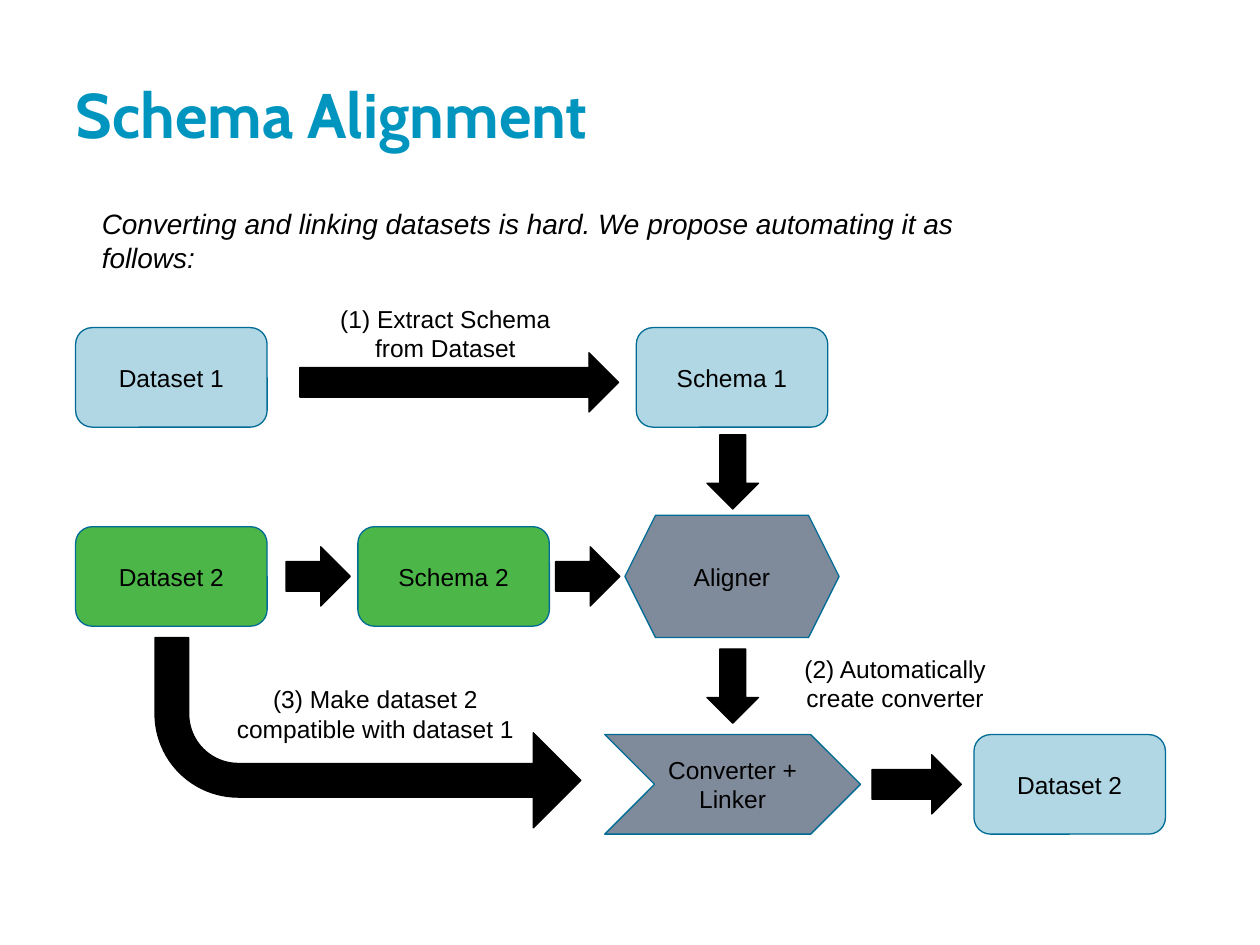
from dataclasses import dataclass

from pptx import Presentation
from pptx.dml.color import RGBColor
from pptx.enum.shapes import MSO_SHAPE
from pptx.enum.text import MSO_ANCHOR, MSO_AUTO_SIZE, PP_ALIGN
from pptx.util import Inches, Pt

ROUNDED = MSO_SHAPE.ROUNDED_RECTANGLE
HEXAGON = MSO_SHAPE.HEXAGON
CHEVRON = MSO_SHAPE.CHEVRON
ARROW = MSO_SHAPE.RIGHT_ARROW
BENT_ARROW = MSO_SHAPE.BENT_ARROW
LEFT, CENTER = PP_ALIGN.LEFT, PP_ALIGN.CENTER
TOP, MIDDLE = MSO_ANCHOR.TOP, MSO_ANCHOR.MIDDLE

BLACK = RGBColor(0x00, 0x00, 0x00)
TITLE_BLUE = RGBColor(0x00, 0x95, 0xBF)
OUTLINE_BLUE = RGBColor(0x00, 0x6B, 0x94)
LIGHT_BLUE = RGBColor(0xB0, 0xD7, 0xE3)
GREEN = RGBColor(0x4C, 0xB7, 0x48)
GRAY = RGBColor(0x7F, 0x8A, 0x9A)

NODE_WIDTH, NODE_HEIGHT = 1.52, 0.79
ARROW_HEIGHT = 0.47
FIRST_ROW, SECOND_ROW, THIRD_ROW = 2.6, 4.18, 5.83


@dataclass
class Node:
    text: str
    left: float
    top: float
    fill: RGBColor
    kind: MSO_SHAPE = ROUNDED
    width: float = NODE_WIDTH
    height: float = NODE_HEIGHT
    adjustment: float = 0.167


@dataclass
class Arrow:
    left: float
    top: float
    width: float
    height: float = ARROW_HEIGHT
    rotation: int = 0


@dataclass
class Caption:
    text: str
    left: float
    top: float
    width: float = 2.17
    height: float = 0.71


NODES = [
    Node("Dataset 1", 0.6, FIRST_ROW, LIGHT_BLUE),
    Node("Schema 1", 5.05, FIRST_ROW, LIGHT_BLUE),
    Node("Aligner", 4.96, 4.09, GRAY, HEXAGON, 1.7, 0.97, 0.25),
    Node("Dataset 2", 0.6, SECOND_ROW, GREEN),
    Node("Schema 2", 2.84, SECOND_ROW, GREEN),
    Node("Converter + Linker", 4.8, THIRD_ROW, GRAY, CHEVRON, 2.03, adjustment=0.5),
    Node("Dataset 2", 7.73, THIRD_ROW, LIGHT_BLUE),
]
ARROWS = [
    Arrow(2.38, 2.8, 2.53),
    Arrow(5.52, 3.54, 0.59, 0.41, rotation=90),
    Arrow(2.27, 4.34, 0.51),
    Arrow(4.41, 4.34, 0.51),
    Arrow(5.52, 5.24, 0.59, 0.41, rotation=90),
    Arrow(6.92, 5.99, 0.71),
]
CAPTIONS = [
    Caption("(1) Extract Schema from Dataset", 2.45, 2.31),
    Caption("(2) Automatically create converter", 6.02, 5.09),
    Caption("(3) Make dataset 2 compatible with dataset 1", 1.78, 5.33, width=2.4),
]


def write_text(shape, text: str, *, size: int = 14, font: str = "Arial",
               color: RGBColor = BLACK, bold: bool = False, italic: bool = False,
               align: PP_ALIGN = CENTER, anchor: MSO_ANCHOR = TOP) -> None:
    frame = shape.text_frame
    frame.word_wrap = True
    frame.auto_size = MSO_AUTO_SIZE.NONE
    frame.vertical_anchor = anchor
    frame.margin_left = frame.margin_right = Inches(0.1)
    frame.margin_top = frame.margin_bottom = Inches(0.1)
    para = frame.paragraphs[0]
    para.alignment = align
    span = para.add_run()
    span.text = text
    span.font.size = Pt(size)
    span.font.name = font
    span.font.color.rgb = color
    span.font.bold = bold
    span.font.italic = italic


def add_text(page, text: str, left: float, top: float, width: float,
             height: float, **text_format) -> None:
    box = page.shapes.add_textbox(Inches(left), Inches(top), Inches(width), Inches(height))
    write_text(box, text, **text_format)


def add_filled_shape(page, kind: MSO_SHAPE, left: float, top: float, width: float,
                     height: float, fill: RGBColor, line: RGBColor):
    shape = page.shapes.add_shape(
        kind, Inches(left), Inches(top), Inches(width), Inches(height))
    shape.shadow.inherit = False
    shape.fill.solid()
    shape.fill.fore_color.rgb = fill
    shape.line.color.rgb = line
    shape.line.width = Pt(0.75)
    return shape


def add_node(page, node: Node) -> None:
    shape = add_filled_shape(page, node.kind, node.left, node.top, node.width,
                             node.height, node.fill, OUTLINE_BLUE)
    shape.adjustments[0] = node.adjustment
    write_text(shape, node.text, anchor=MIDDLE)


def add_arrow(page, arrow: Arrow) -> None:
    shape = add_filled_shape(page, ARROW, arrow.left, arrow.top, arrow.width,
                             arrow.height, BLACK, BLACK)
    shape.rotation = arrow.rotation


def add_return_arrow(page) -> None:
    """Draw the arrow that bends from Dataset 2 down to the converter."""
    shape = add_filled_shape(page, BENT_ARROW, 1.23, 5.06, 3.38, 1.51, BLACK, BLACK)
    for index, value in enumerate((0.177, 0.25, 0.25, 0.438)):
        shape.adjustments[index] = value
    shape.rotation = 180
    shape.element.spPr.xfrm.set("flipH", "1")


def main() -> None:
    deck = Presentation()
    deck.slide_width, deck.slide_height = Inches(10), Inches(7.5)
    page = deck.slides.add_slide(deck.slide_layouts[5])

    # Title and introduction
    title = page.shapes.title
    title.left, title.top = Inches(0.5), Inches(0.5)
    title.width, title.height = Inches(9), Inches(1.18)
    write_text(title, "Schema Alignment", size=36, font="Cabin",
               color=TITLE_BLUE, bold=True, align=LEFT)
    add_text(page, "Converting and linking datasets is hard. "
             "We propose automating it as follows:",
             0.71, 1.54, 7.63, 0.59, size=16, italic=True, align=LEFT)

    # Flow diagram
    for node in NODES:
        add_node(page, node)
    for arrow in ARROWS:
        add_arrow(page, arrow)
    add_return_arrow(page)

    # Step captions
    for caption in CAPTIONS:
        add_text(page, caption.text, caption.left, caption.top,
                 caption.width, caption.height)

    deck.save("out.pptx")


if __name__ == "__main__":
    main()
